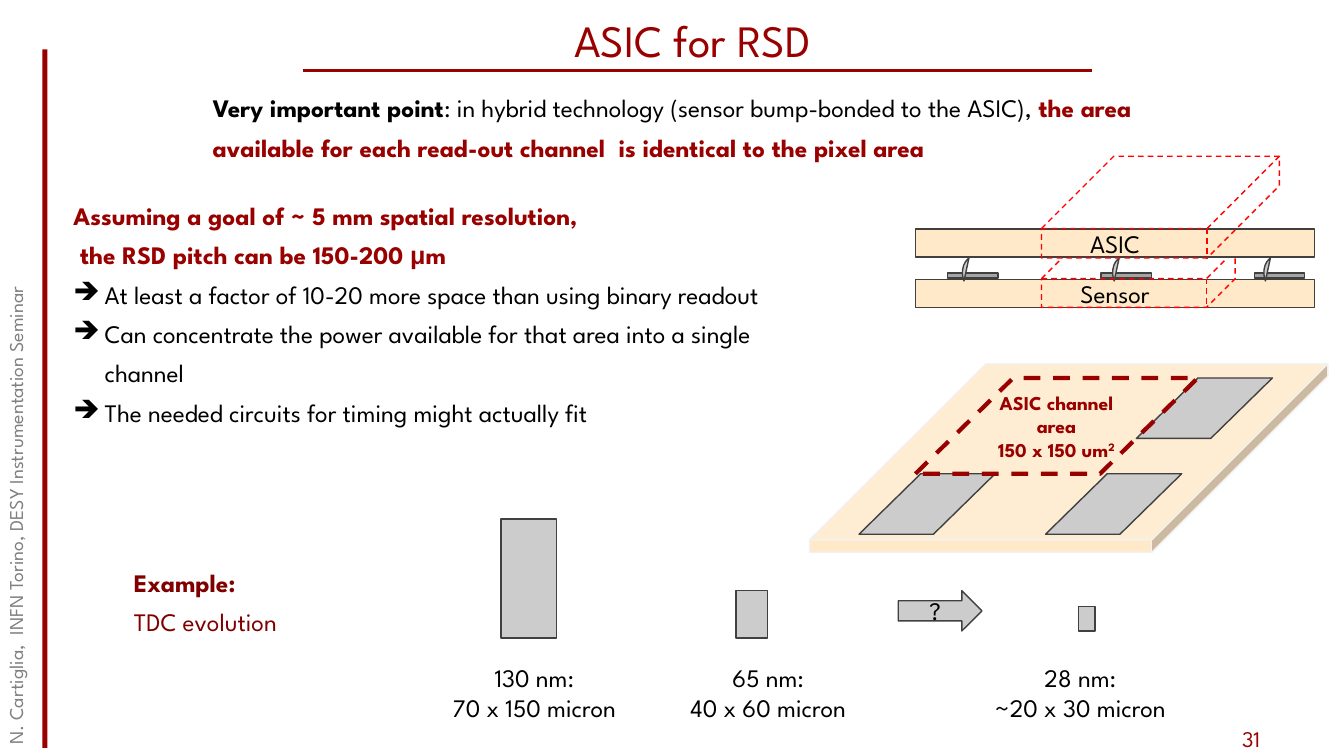
"""Builds the slide on the ASIC area available to each RSD read-out channel."""
import pptx
import pptx.util
import pptx.dml.color
import pptx.enum.dml
import pptx.enum.shapes
import pptx.enum.text
import pptx.oxml
import pptx.oxml.ns
from lxml import etree

Inches = pptx.util.Inches
Pt = pptx.util.Pt
SHAPE = pptx.enum.shapes.MSO_SHAPE
ALIGN = pptx.enum.text.PP_ALIGN
ANCHOR = pptx.enum.text.MSO_ANCHOR

FONT = "League Spartan"
RED, MAROON, BLACK, GREY = "990000", "800000", "000000", "808080"
SILVER, CREAM, EDGE, PAD, DASHED = "CCCCCC", "FFE9C8", "404040", "A4A4A4", "FF0000"

TITLE = [[("ASIC for RSD", RED, False)]]
PAGE = [[("31", RED, False)]]
SEMINAR = [[("N. Cartiglia,  INFN Torino, DESY Instrumentation Seminar", GREY, False)]]
KEY_POINT = [[
    ("Very important point", BLACK, True),
    (": in hybrid technology (sensor bump-bonded to the ASIC), ", BLACK, False),
    ("the area available for each read-out channel  is identical to the pixel area", RED, True),
]]
GOAL = [
    [("Assuming a goal of ~ 5 mm spatial resolution,", RED, True)],
    [(" the RSD pitch can be 150-200 ", RED, True), ("μ", RED, True), ("m", RED, True)],
]
BENEFITS = [
    [("At least a factor of 10-20 more space than using binary readout", BLACK, False)],
    [("Can concentrate the power available for that area into a single channel", BLACK, False)],
    [("The needed circuits for timing might actually fit", BLACK, False)],
]
EXAMPLE = [[("Example:", MAROON, True)], [("TDC evolution", MAROON, False)]]
CHANNEL = [
    [("ASIC channel area", RED, True)],
    [("150 x 150 um", RED, True), ("2", RED, True)],
]
TDC_NODES = [
    ("130 nm:", "70 x 150 micron", (4.97, 5.15, 0.55, 1.18), (4.26, 2.08)),
    ("65 nm:", "40 x 60 micron", (7.3, 5.86, 0.31, 0.47), (6.65, 1.94)),
    ("28 nm:", "~20 x 30 micron", (10.7, 6.02, 0.16, 0.24), (9.67, 2.09)),
]
LABEL_TOP, LABEL_HEIGHT = 6.52, 0.71
PIXELS = [(10.37, 4.7), (11.27, 3.75), (8.52, 4.7)]
LAYER_LEFT, LAYER_WIDTH, LAYER_HEIGHT = 9.08, 3.96, 0.28
BUMPS = [(9.4, 9.5), (10.92, 10.99), (12.44, 12.49)]

deck = pptx.Presentation()
deck.slide_width, deck.slide_height = Inches(13.33), Inches(7.5)
slide = deck.slides.add_slide(deck.slide_layouts[6])


def rgb(hex_colour):
    return pptx.dml.color.RGBColor.from_string(hex_colour)


def add_bullet(paragraph):
    properties = paragraph._p.get_or_add_pPr()
    properties.set("marL", str(Inches(0.31)))
    properties.set("indent", str(-Inches(0.31)))
    etree.SubElement(properties, pptx.oxml.ns.qn("a:buChar")).set("char", "➔")


def write(frame, paragraphs, size, align=ALIGN.LEFT, spacing=None, bulleted_from=None):
    for number, runs in enumerate(paragraphs):
        paragraph = frame.paragraphs[0] if number == 0 else frame.add_paragraph()
        paragraph.alignment = align
        if spacing:
            paragraph.line_spacing = spacing
        if bulleted_from is not None and number >= bulleted_from:
            add_bullet(paragraph)
        paragraph.font.name, paragraph.font.size = FONT, Pt(size)
        uniform = len({run[1:] for run in runs}) == 1
        if uniform:
            paragraph.font.color.rgb, paragraph.font.bold = rgb(runs[0][1]), runs[0][2]
        for words, colour, bold in runs:
            run = paragraph.add_run()
            run.text = words
            if not uniform:
                run.font.color.rgb, run.font.bold = rgb(colour), bold
            if words == "μ":
                run.font.name = "Arial"
            if words == "2":
                run._r.get_or_add_rPr().set("baseline", "30000")


def add_text(box, paragraphs, size, wrap=True, anchor=ANCHOR.TOP, **style):
    text_box = slide.shapes.add_textbox(*map(Inches, box))
    text_box.text_frame.word_wrap = wrap
    text_box.text_frame.vertical_anchor = anchor
    write(text_box.text_frame, paragraphs, size, **style)
    return text_box


def add_part(kind, box, fill=None, line=EDGE, width=1, dashed=False, adjust=(), turn=0):
    part = slide.shapes.add_shape(kind, *map(Inches, box))
    part.shadow.inherit = False
    part.rotation = turn
    for index, value in enumerate(adjust):
        part.adjustments[index] = value
    if fill:
        part.fill.solid()
        part.fill.fore_color.rgb = rgb(fill)
    else:
        part.fill.background()
    if line:
        part.line.color.rgb, part.line.width = rgb(line), Pt(width)
    else:
        part.line.fill.background()
    if dashed:
        part.line.dash_style = pptx.enum.dml.MSO_LINE.DASH
    return part


def label(part, paragraphs, size=18):
    part.text_frame.vertical_anchor = ANCHOR.MIDDLE
    write(part.text_frame, paragraphs, size, ALIGN.CENTER)


def add_layer(name, top):
    layer = add_part(SHAPE.RECTANGLE, (LAYER_LEFT, top, LAYER_WIDTH, LAYER_HEIGHT), CREAM)
    label(layer, [[(name, BLACK, False)]])


add_part(SHAPE.RECTANGLE, (0.42, 0.49, 0.05, 6.93), RED, None)
rule = slide.shapes.add_connector(
    pptx.enum.shapes.MSO_CONNECTOR.STRAIGHT, *map(Inches, (3.01, 0.7, 10.83, 0.7)))
rule.line.color.rgb, rule.line.width = rgb(RED), Pt(2)
etree.SubElement(rule._element.spPr, pptx.oxml.ns.qn("a:effectLst"))
add_text((12.22, 7.15, 0.81, 0.35), PAGE, 16, anchor=ANCHOR.MIDDLE)
add_text((-3.49, 3.63, 7.33, 0.38), SEMINAR, 14).rotation = 270
add_text((0.41, -0.02, 12.92, 0.73), TITLE, 32, anchor=ANCHOR.BOTTOM, align=ALIGN.CENTER)
add_text((2.01, 0.78, 9.94, 1.63), KEY_POINT, 18, spacing=1.3)

for node, area, block, (left, width) in TDC_NODES:
    add_part(SHAPE.RECTANGLE, block, SILVER)
    add_text((left, LABEL_TOP, width, LABEL_HEIGHT),
             [[(node, BLACK, False)], [(area, BLACK, False)]], 18, wrap=False, align=ALIGN.CENTER)
label(add_part(SHAPE.RIGHT_ARROW, (8.91, 5.86, 0.83, 0.4), SILVER), [[("?", BLACK, False)]])
add_text((1.23, 5.49, 1.9, 0.85), EXAMPLE, 18, wrap=False, spacing=1.3)

add_part(SHAPE.CUBE, (8.03, 3.61, 5.14, 1.87), CREAM, "F2F2F2", adjust=[0.934])
for left, top in PIXELS:
    add_part(SHAPE.PARALLELOGRAM, (left, top, 1.35, 0.6), SILVER, adjust=[1.02])
channel = add_part(SHAPE.PARALLELOGRAM, (9.08, 3.75, 2.8, 0.95), None, RED, 3, True, [1.02])
label(channel, CHANNEL, 14)
add_text((0.63, 1.85, 7.23, 3.21), GOAL + BENEFITS, 18, spacing=1.3, bulleted_from=len(GOAL))

add_layer("Sensor", 2.77)
for pad_left, ball_left in BUMPS:
    add_part(SHAPE.RECTANGLE, (pad_left, 2.71, 0.5, 0.05), PAD)
    add_part(SHAPE.CHORD, (ball_left, 2.59, 0.33, 0.24), SILVER,
             adjust=[56.1 * 0.6, 162 * 0.6], turn=87.3)
add_part(SHAPE.CUBE, (10.33, 2.48, 1.92, 0.57), None, DASHED, dashed=True, adjust=[0.5])
add_layer("ASIC", 2.27)
add_part(SHAPE.CUBE, (10.33, 1.55, 2.36, 1.01), None, DASHED, dashed=True, adjust=[0.71])

deck.save("out.pptx")
